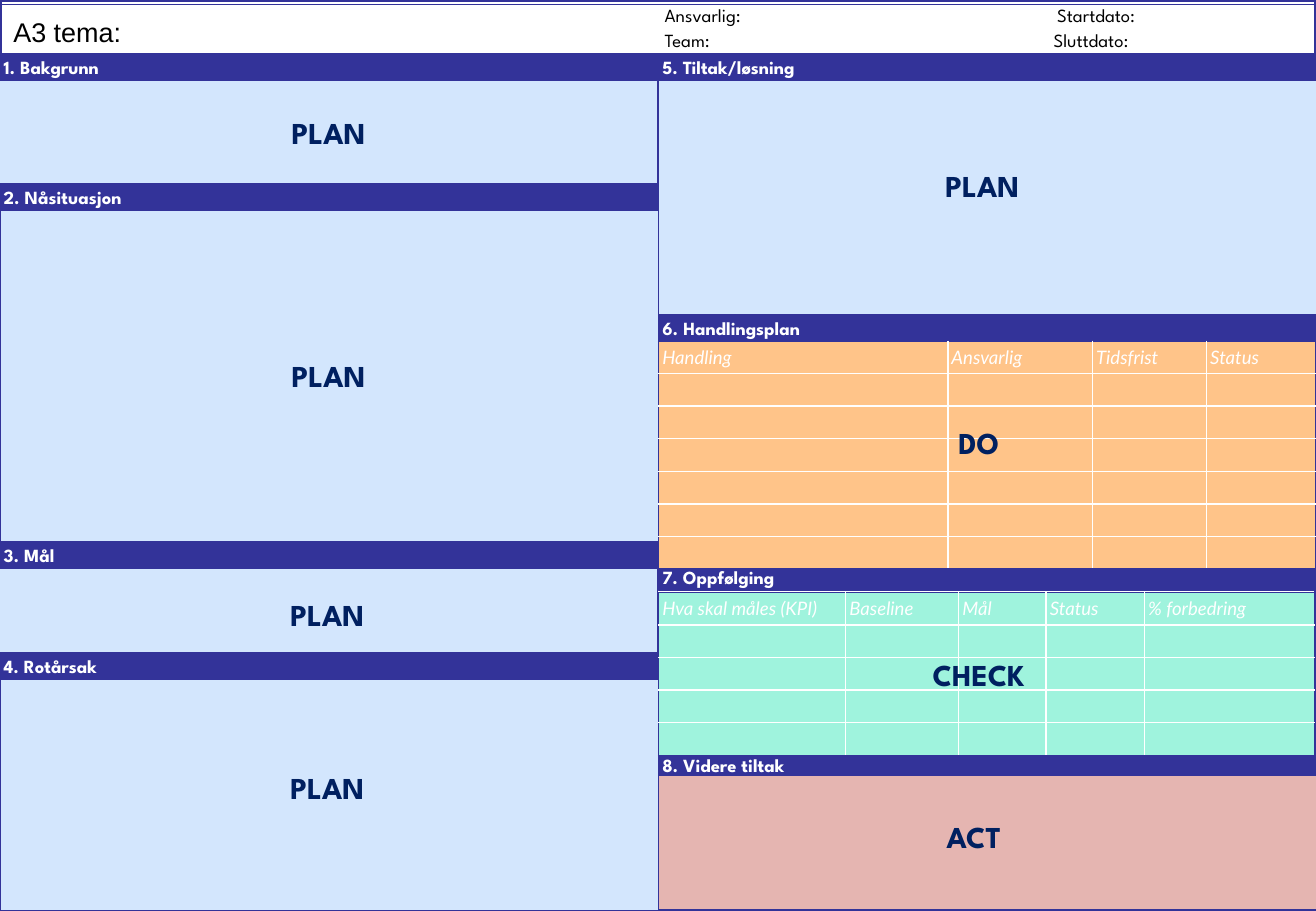
import lxml.etree
import pptx
import pptx.dml.color
import pptx.enum.shapes
import pptx.enum.text
import pptx.oxml.ns
import pptx.util

Inches = pptx.util.Inches
Pt = pptx.util.Pt
RGBColor = pptx.dml.color.RGBColor
ALIGN = pptx.enum.text.PP_ALIGN
ANCHOR = pptx.enum.text.MSO_ANCHOR
qn = pptx.oxml.ns.qn

INDIGO = RGBColor(0x33, 0x33, 0x99)
NAVY = RGBColor(0x00, 0x20, 0x60)
BLACK = RGBColor(0x00, 0x00, 0x00)
WHITE = RGBColor(0xFF, 0xFF, 0xFF)
PLAN_BLUE = RGBColor(0xD3, 0xE6, 0xFD)
DO_ORANGE = RGBColor(0xFF, 0xC4, 0x89)
CHECK_GREEN = RGBColor(0x9F, 0xF3, 0xDD)
ACT_RED = RGBColor(0xE5, 0xB5, 0xB1)

HEADING_FONT = "League Spartan"
SLIDE_WIDTH, SLIDE_HEIGHT = 10.83, 7.5
COLUMN_WIDTH, BAR_HEIGHT = 5.42, 0.22
LABEL_WIDTH, LABEL_HEIGHT = 1.57, 0.4

HEADINGS = [
    ("1. Bakgrunn", 0, 0.44),
    ("2. Nåsituasjon", 0, 1.51),
    ("3. Mål", 0, 4.46),
    ("4. Rotårsak", 0, 5.37),
    ("5. Tiltak/løsning", COLUMN_WIDTH, 0.44),
    ("6. Handlingsplan", COLUMN_WIDTH, 2.59),
    ("7. Oppfølging", COLUMN_WIDTH, 4.64),
    ("8. Videre tiltak", COLUMN_WIDTH, 6.19),
]
PANELS = [
    (-0.01, 0.66, 0.85, PLAN_BLUE),
    (0, 1.73, 2.73, PLAN_BLUE),
    (-0.01, 4.68, 0.69, PLAN_BLUE),
    (0, 5.59, 1.91, PLAN_BLUE),
    (COLUMN_WIDTH, 0.66, 1.93, PLAN_BLUE),
    (COLUMN_WIDTH, 6.38, 1.11, ACT_RED),
]
TABLES = [
    (["Handling", "Ansvarlig", "Tidsfrist", "Status"],
     [2.38, 1.19, 0.94, 0.9], 7, 2.81, 1.83, DO_ORANGE),
    (["Hva skal måles (KPI)", "Baseline", "Mål", "Status", "% forbedring"],
     [1.54, 0.93, 0.72, 0.81, 1.4], 5, 4.88, 1.31, CHECK_GREEN),
]
DETAILS = [
    ("Team:\tSluttdato:", 0.18, 3.2),
    ("Ansvarlig:\tStartdato:", -0.03, 3.23),
]
PHASES = [
    ("PLAN", 1.92, 0.89),
    ("PLAN", 1.92, 2.89),
    ("PLAN", 1.91, 4.86),
    ("PLAN", 1.91, 6.28),
    ("PLAN", 7.3, 1.33),
    ("DO", 7.27, 3.44),
    ("CHECK", 7.27, 5.35),
    ("ACT", 7.23, 6.69),
]


def set_text(text_frame, text, size, color, name=HEADING_FONT, bold=False, italic=False):
    text_frame.text = text
    for run in text_frame.paragraphs[0].runs:
        font = run.font
        font.size, font.name = Pt(size), name
        font.bold, font.italic = bold, italic
        font.color.rgb = color


def set_margins(target, left, top, right, bottom):
    target.margin_left, target.margin_top = Inches(left), Inches(top)
    target.margin_right, target.margin_bottom = Inches(right), Inches(bottom)


def add_box(slide, left, top, width, height, fill=None, line_width=0.75):
    shape = slide.shapes.add_shape(
        pptx.enum.shapes.MSO_SHAPE.RECTANGLE,
        Inches(left), Inches(top), Inches(width), Inches(height))
    shape.shadow.inherit = False
    if fill is None:
        shape.fill.background()
    else:
        shape.fill.solid()
        shape.fill.fore_color.rgb = fill
    shape.line.color.rgb = INDIGO
    shape.line.width = Pt(line_width)
    return shape


def add_box_text(shape, text, size, color, margins, **style):
    frame = shape.text_frame
    set_text(frame, text, size, color, **style)
    set_margins(frame, *margins)
    frame.vertical_anchor = ANCHOR.MIDDLE
    frame.paragraphs[0].alignment = ALIGN.LEFT


def add_text(slide, text, left, top, width, height, size, color, bold=False):
    box = slide.shapes.add_textbox(Inches(left), Inches(top), Inches(width), Inches(height))
    box.text_frame.word_wrap = True
    set_text(box.text_frame, text, size, color, bold=bold)
    return box.text_frame


def set_borders(cell, colors):
    properties = cell._tc.get_or_add_tcPr()
    for index, (side, color) in enumerate(zip("LRTB", colors)):
        line = lxml.etree.Element(qn("a:ln" + side), w=str(Pt(1)))
        fill = lxml.etree.SubElement(line, qn("a:solidFill"))
        lxml.etree.SubElement(fill, qn("a:srgbClr"), val=str(color))
        properties.insert(index, line)


def add_grid(slide, titles, widths, row_count, top, height, fill):
    table = slide.shapes.add_table(
        row_count, len(widths), Inches(COLUMN_WIDTH), Inches(top),
        Inches(sum(widths)), Inches(height)).table
    table.first_row = table.horz_banding = False
    for column, width in zip(table.columns, widths):
        column.width = Inches(width)
    for row_index, row in enumerate(table.rows):
        row.height = Inches(height / row_count)
        for column_index, cell in enumerate(row.cells):
            cell.fill.solid()
            cell.fill.fore_color.rgb = fill
            set_margins(cell, 0.03, 0.04, 0.03, 0.04)
            outer = (column_index == 0, column_index == len(widths) - 1,
                     row_index == 0, row_index == row_count - 1)
            set_borders(cell, [INDIGO if edge else WHITE for edge in outer])
            if row_index == 0:
                set_text(cell.text_frame, titles[column_index], 11, WHITE, name="Lato", italic=True)
            else:
                paragraph = cell.text_frame.paragraphs[0]
                lxml.etree.SubElement(paragraph._p, qn("a:endParaRPr"), sz="1100")


def main():
    presentation = pptx.Presentation()
    presentation.slide_width = Inches(SLIDE_WIDTH)
    presentation.slide_height = Inches(SLIDE_HEIGHT)
    slide = presentation.slides.add_slide(presentation.slide_layouts[6])

    add_box(slide, 0, 0, SLIDE_WIDTH, SLIDE_HEIGHT, WHITE, 2)
    theme = add_box(slide, -0.01, 0.04, SLIDE_WIDTH, 0.44)
    add_box_text(theme, "A3 tema:", 16, BLACK, (0.12, 0.06, 0.12, 0.06), name="Arial")

    for text, left, top in HEADINGS:
        bar = add_box(slide, left, top, COLUMN_WIDTH, BAR_HEIGHT, INDIGO)
        add_box_text(bar, text, 11, WHITE, (0.03, 0, 0, 0), bold=True)
    for left, top, height, fill in PANELS:
        add_box(slide, left, top, COLUMN_WIDTH, height, fill)
    for grid in TABLES:
        add_grid(slide, *grid)

    for text, top, tab_position in DETAILS:
        frame = add_text(slide, text, 5.35, top, COLUMN_WIDTH, 0.3, 11, BLACK)
        set_margins(frame, 0.12, 0.06, 0.12, 0.06)
        properties = frame.paragraphs[0]._p.get_or_add_pPr()
        tabs = lxml.etree.SubElement(properties, qn("a:tabLst"))
        lxml.etree.SubElement(tabs, qn("a:tab"), pos=str(Inches(tab_position)), algn="l")
    for text, left, top in PHASES:
        frame = add_text(slide, text, left, top, LABEL_WIDTH, LABEL_HEIGHT, 18, NAVY, bold=True)
        frame.paragraphs[0].alignment = ALIGN.CENTER

    presentation.save("out.pptx")


if __name__ == "__main__":
    main()
